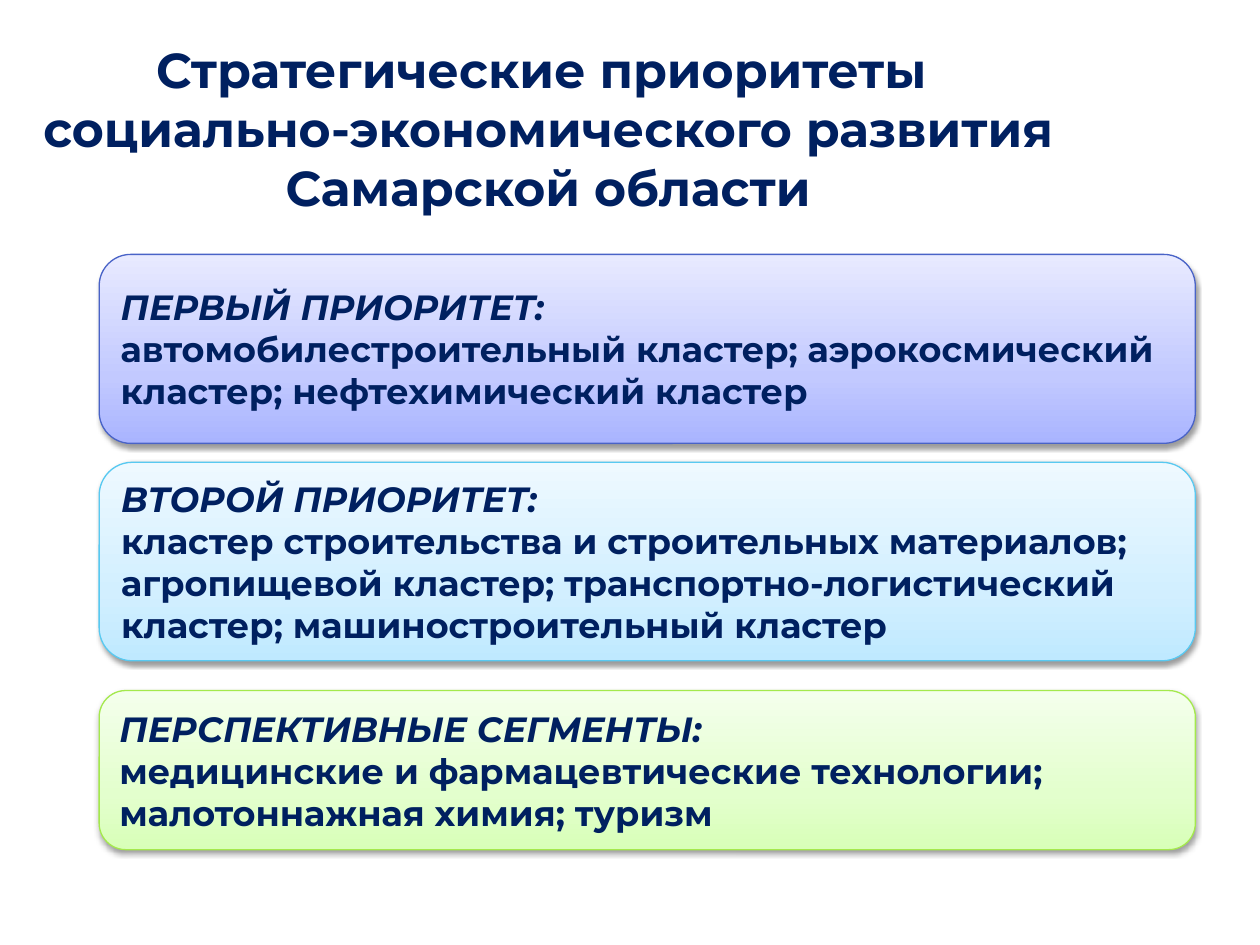
from lxml.etree import SubElement as Sub
from pptx import Presentation
from pptx.dml.color import RGBColor as Color
from pptx.enum.shapes import MSO_SHAPE as Shape
from pptx.enum.text import MSO_ANCHOR as Anchor, MSO_AUTO_SIZE as Fit, PP_ALIGN as Align
from pptx.oxml.ns import qn
from pptx.util import Pt

TITLE = ["Стратегические приоритеты ",
         "социально-экономического развития Самарской области"]
CARDS = [
    dict(head="ПЕРВЫЙ ПРИОРИТЕТ:",
         body="автомобилестроительный кластер; аэрокосмический кластер; "
              "нефтехимический кластер",
         top=145.4, high=108, tone="blue"),
    dict(head="ВТОРОЙ ПРИОРИТЕТ:",
         body="кластер строительства и строительных материалов; "
              "агропищевой кластер; транспортно-логистический кластер; "
              "машиностроительный кластер",
         top=264.2, high=113.4, tone="sky"),
    dict(head="ПЕРСПЕКТИВНЫЕ СЕГМЕНТЫ:",
         body="медицинские и фармацевтические технологии; "
              "малотоннажная химия; туризм",
         top=394.6, high=90.9, tone="green"),
]
THEME = dict(
    font="Montserrat", ink="002060", title=28, text=20, line=0.75,
    shade=dict(color="000000", alpha=38, blur=3.1, dist=1.6, turn=90),
    stops=(0, 35, 100),
    blue=("4963C7", ("A9B4FF", "C2C9FF", "E8EAFF")),
    sky=("58C9F1", ("BFE9FF", "D2EFFF", "EEF9FF")),
    green=("A4E94C", ("D8FFB8", "E3FFCD", "F4FFEC")),
)
LEFT, WIDE = 56.7, 626.4


def put(para, text, size, slant=False):
    run = para.add_run()
    run.text = text
    font = run.font
    font.name, font.size = THEME["font"], Pt(size)
    font.bold, font.italic = True, slant
    font.color.rgb = Color.from_string(THEME["ink"])


def tint(node, color):
    return Sub(node, qn("a:srgbClr"), val=color)


def blend(shape, tones):
    shape.fill.gradient()
    shape.fill.gradient_angle = 90
    stops = shape._element.spPr.find(".//" + qn("a:gsLst"))
    for old in list(stops):
        stops.remove(old)
    for pos, tone in zip(THEME["stops"], tones):
        tint(Sub(stops, qn("a:gs"), pos=str(pos * 1000)), tone)


def shade(shape):
    look = THEME["shade"]
    shape.shadow.inherit = False
    node = Sub(shape._element.spPr.find(qn("a:effectLst")), qn("a:outerShdw"),
               blurRad=str(Pt(look["blur"])), dist=str(Pt(look["dist"])),
               dir=str(look["turn"] * 60000), rotWithShape="0")
    Sub(tint(node, look["color"]), qn("a:alpha"), val=str(look["alpha"] * 1000))


def add_title(slide):
    box = slide.shapes.title
    box.left, box.top, box.width, box.height = Pt(0), Pt(28.1), Pt(626.4), Pt(90)
    frame = box.text_frame
    frame.word_wrap, frame.auto_size = True, Fit.NONE
    frame.vertical_anchor = Anchor.MIDDLE
    para = frame.paragraphs[0]
    para.alignment = Align.CENTER
    for i, text in enumerate(TITLE):
        if i:
            para.add_line_break()
        put(para, text, THEME["title"])


def add_card(slide, card):
    edge, tones = THEME[card["tone"]]
    box = slide.shapes.add_shape(Shape.ROUNDED_RECTANGLE, Pt(LEFT), Pt(card["top"]),
                                 Pt(WIDE), Pt(card["high"]))
    blend(box, tones)
    box.line.color.rgb = Color.from_string(edge)
    box.line.width = Pt(THEME["line"])
    shade(box)
    frame = box.text_frame
    frame.word_wrap = True
    frame.vertical_anchor = Anchor.MIDDLE
    for para, part in ((frame.paragraphs[0], "head"), (frame.add_paragraph(), "body")):
        para.alignment = Align.LEFT
        put(para, card[part], THEME["text"], part == "head")


def main():
    deck = Presentation()
    deck.slide_width, deck.slide_height = Pt(720), Pt(540)
    slide = deck.slides.add_slide(deck.slide_layouts[5])
    add_title(slide)
    for card in CARDS:
        add_card(slide, card)
    deck.save("out.pptx")


if __name__ == "__main__":
    main()
